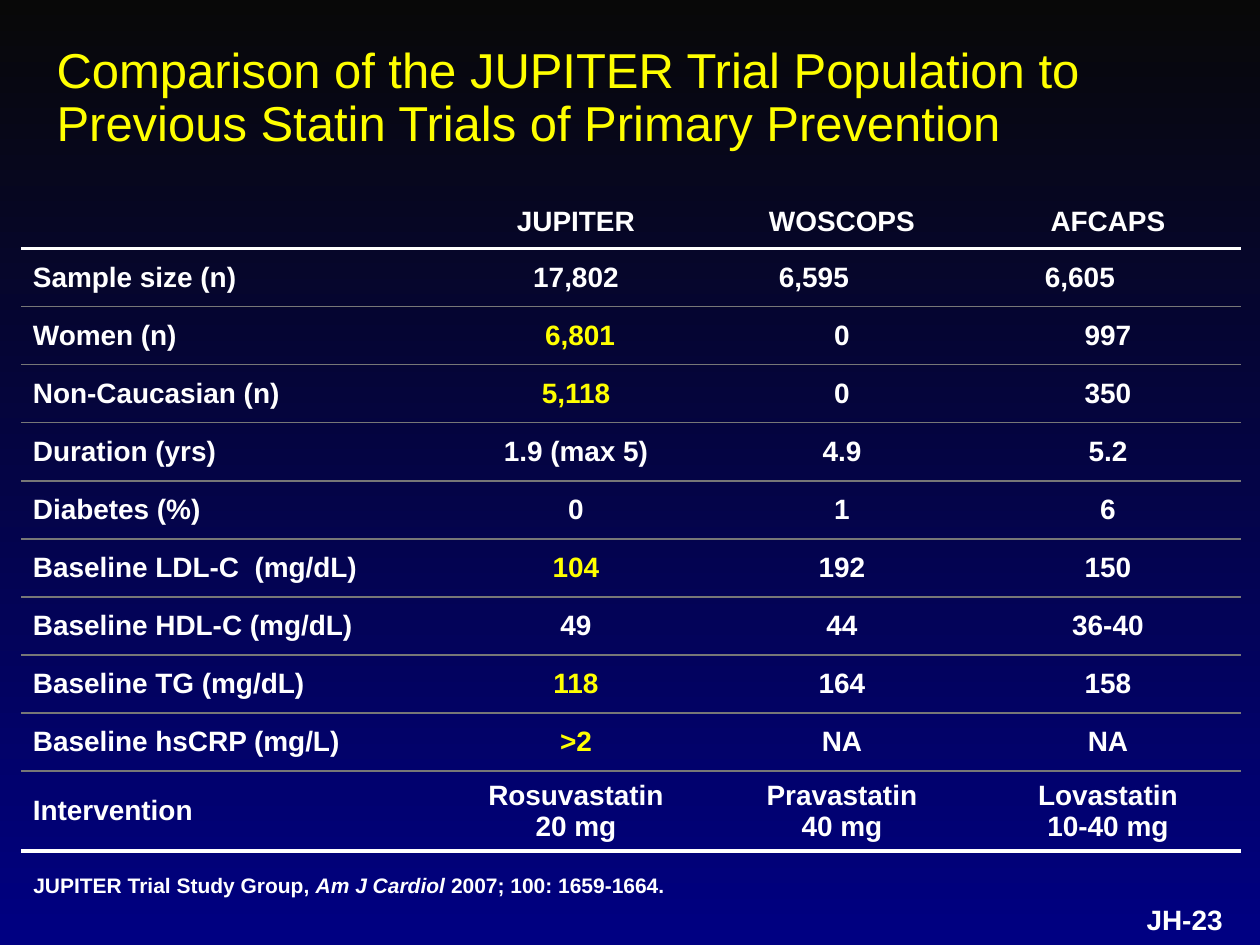
from lxml import etree
from pptx import Presentation
from pptx.dml.color import RGBColor
from pptx.enum import text as t
from pptx.oxml.ns import qn
from pptx.util import Inches, Pt

PX = Inches(1) / 126
COLORS = {"white": "FFFFFF", "yellow": "FFFF00", "grey": "777777",
          "top": "080808", "bottom": "000082"}
PLAIN_STYLE = "{2D5ABB26-0587-4C30-8999-92F81FD0307C}"

HEAD = ["", "JUPITER", "WOSCOPS", "AFCAPS"]
ROWS = [
    ["Sample size (n)", "17,802", "6,595", "6,605"],
    ["Women (n)", "6,801", "0", "997"],
    ["Non-Caucasian (n)", "5,118", "0", "350"],
    ["Duration (yrs)", "1.9 (max 5)", "4.9", "5.2"],
    ["Diabetes (%)", "0", "1", "6"],
    ["Baseline LDL-C  (mg/dL)", "104", "192", "150"],
    ["Baseline HDL-C (mg/dL)", "49", "44", "36-40"],
    ["Baseline TG (mg/dL)", "118", "164", "158"],
    ["Baseline hsCRP (mg/L)", ">2", "NA", "NA"],
    ["Intervention", "Rosuvastatin\n20 mg", "Pravastatin\n40 mg",
     "Lovastatin\n10-40 mg"],
]
MARKED = {"6,801", "5,118", "104", "118", ">2"}
# Extra (left, right) margins that set a value off from its column's centre
NUDGES = {"6,595": (0, 56), "6,605": (0, 56), "6,801": (8, 0)}


def px(n):
    return round(n * PX)


def rgb(name):
    return RGBColor.from_string(COLORS[name])


def put(frame, text, size=16, color="white", bold=True, align="LEFT", spacing=None):
    """Write one paragraph a line; parts between asterisks are italic."""
    for i, line in enumerate(text.split("\n")):
        para = frame.add_paragraph() if i else frame.paragraphs[0]
        para.alignment = getattr(t.PP_ALIGN, align)
        if spacing:
            para.line_spacing = spacing
        for j, part in enumerate(line.split("*")):
            if not part:
                continue
            run = para.add_run()
            run.text = part
            font = run.font
            font.name, font.size, font.bold = "Arial", Pt(size), bold
            font.italic = j % 2 == 1
            font.color.rgb = rgb(color)


def edge(cell, side, color, width):
    line = etree.SubElement(cell._tc.get_or_add_tcPr(), qn(f"a:ln{side}"),
                            w=str(Pt(width)))
    fill = etree.SubElement(line, qn("a:solidFill"))
    etree.SubElement(fill, qn("a:srgbClr"), val=COLORS[color])


def backdrop(slide):
    fill = slide.background.fill
    fill.gradient()
    fill.gradient_angle = 270
    for stop, name in zip(fill.gradient_stops, ("top", "bottom")):
        stop.color.rgb = rgb(name)


def heading(slide, x, y, w, h):
    title = slide.shapes.title
    title.left, title.top, title.width, title.height = map(px, (x, y, w, h))
    frame = title.text_frame
    frame.auto_size = t.MSO_AUTO_SIZE.NONE
    frame.vertical_anchor = t.MSO_ANCHOR.BOTTOM
    put(frame, "Comparison of the JUPITER Trial Population to "
        "Previous Statin Trials of Primary Prevention",
        size=28, color="yellow", bold=False, spacing=0.9)


def grid(slide, x, y, w, h):
    rows = [HEAD] + ROWS
    last = len(rows) - 1
    first, head, foot = 422, 46, 80
    table = slide.shapes.add_table(len(rows), len(HEAD),
                                   *map(px, (x, y, w, h))).table
    table.first_row = table.horz_banding = False
    table._tbl.tblPr.find(qn("a:tableStyleId")).text = PLAIN_STYLE
    for c, column in enumerate(table.columns):
        column.width = px((w - first) / (len(HEAD) - 1) if c else first)
    for r, row in enumerate(table.rows):
        row.height = px({0: head, last: foot}.get(r, (h - head - foot) / (last - 1)))
        for c, value in enumerate(rows[r]):
            cell = table.cell(r, c)
            left, right = NUDGES.get(value, (0, 0))
            cell.margin_left, cell.margin_right = px(12 + left), px(12 + right)
            cell.margin_top = cell.margin_bottom = px(4)
            cell.vertical_anchor = t.MSO_ANCHOR.MIDDLE if r else t.MSO_ANCHOR.TOP
            put(cell.text_frame, value, align="CENTER" if c else "LEFT",
                color="yellow" if value in MARKED else "white")
            for side, n in (("T", r - 1), ("B", r)):
                if n >= 0:
                    edge(cell, side, *(("white", 2.25) if n in (0, last)
                                       else ("grey", 1)))
            cell.fill.background()


def note(slide, x, y, w, h, text, wrap=True, anchor="TOP", **style):
    frame = slide.shapes.add_textbox(*map(px, (x, y, w, h))).text_frame
    frame.word_wrap = wrap
    frame.vertical_anchor = getattr(t.MSO_ANCHOR, anchor)
    put(frame, text, **style)


def main():
    deck = Presentation()
    deck.slide_width, deck.slide_height = px(1260), px(945)
    slide = deck.slides.add_slide(deck.slide_layouts[5])
    backdrop(slide)
    heading(slide, 44, 45, 1172, 113)
    grid(slide, 21, 202, 1220, 649)
    note(slide, 21, 866, 658, 38,
         "JUPITER Trial Study Group, *Am J Cardiol* 2007; 100: 1659-1664.",
         wrap=False, size=12)
    note(slide, 0, 898, 1235, 44, "JH-23", anchor="BOTTOM", align="RIGHT")
    deck.save("out.pptx")


if __name__ == "__main__":
    main()
